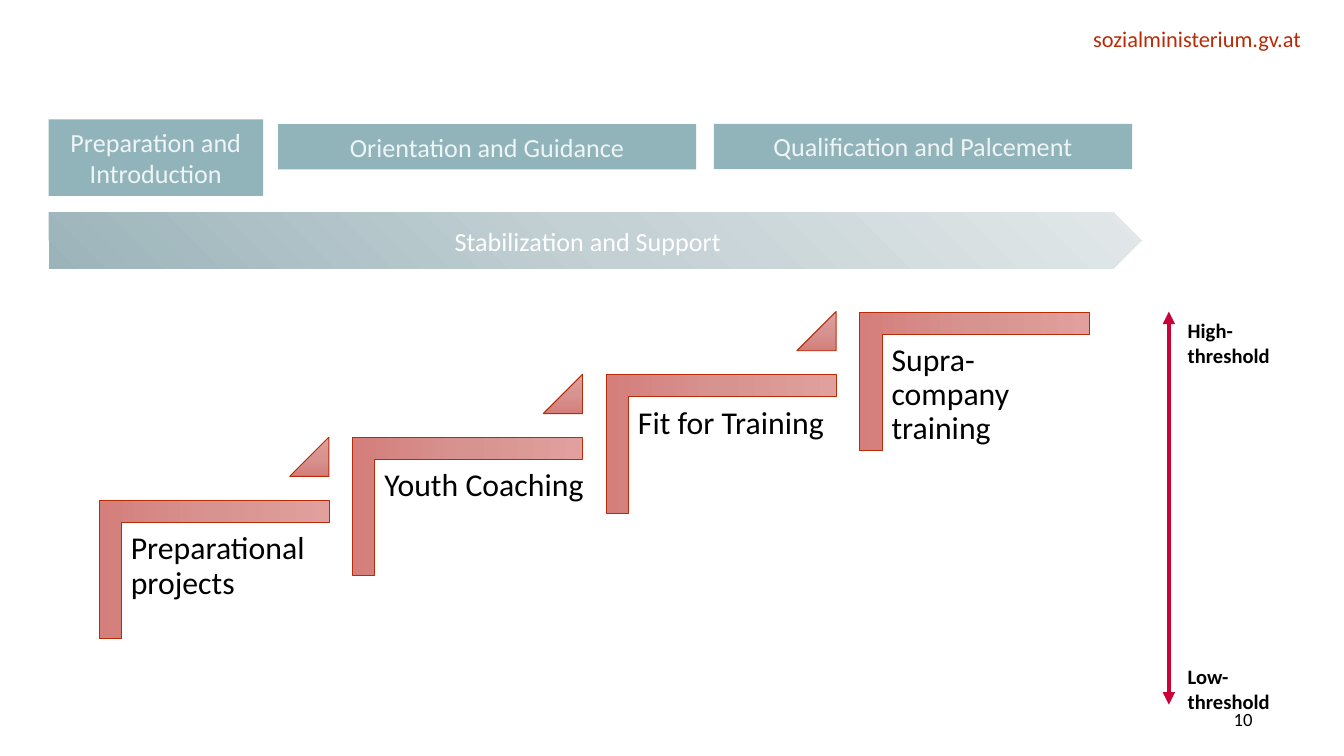
from copy import deepcopy
from dataclasses import dataclass

from lxml.etree import SubElement
from pptx import Presentation
from pptx.dml.color import RGBColor as RGB
from pptx.enum.shapes import MSO_CONNECTOR as CONNECTOR, MSO_SHAPE as SHAPE
from pptx.enum.text import MSO_ANCHOR as ANCHOR, PP_ALIGN as ALIGN
from pptx.oxml.ns import qn
from pptx.util import Pt


@dataclass(frozen=True)
class Theme:
    font: str = "Calibri"
    black: str = "000000"
    white: str = "FFFFFF"
    red: str = "B92B06"
    crimson: str = "CA0237"
    teal: str = "236B76"
    pale: str = "EFF4F7"
    step_gradient: tuple = ("E1A09D", "D79390", "D47F7C")
    support_gradient: tuple = ("9BB4BA", "C3D0D4", "E2E8E9")
    step_size: float = 17
    phase_size: float = 14
    site_size: float = 12
    threshold_size: float = 11
    number_size: float = 10


THEME = Theme()
PHASES = [
    ("Preparation and Introduction", 26, 64, 115, 41),
    ("Orientation and Guidance", 149, 66.5, 224, 24.3),
    ("Qualification and Palcement", 382.5, 66.3, 224, 24.3),
]
STEPS = [
    ("Preparational projects", 111),
    ("Youth Coaching", 120),
    ("Fit for Training", 111),
    ("Supra-company training", 111),
]
STEP_LEFT, STEP_TOP = 77.7, 243.5
STEP_RUN, STEP_RISE = 135.85, 33.65
ARROW_TOP, ARROW_BOTTOM = 167, 377.5


def write(shape, text, size, color, align=ALIGN.LEFT, anchor=ANCHOR.TOP,
          insets=(7.2, 3.6), bold=False, spacing=None):
    frame = shape.text_frame
    frame.word_wrap = True
    frame.vertical_anchor = anchor
    frame.margin_left = frame.margin_right = Pt(insets[0])
    frame.margin_top = frame.margin_bottom = Pt(insets[1])
    frame.text = text
    paragraph = frame.paragraphs[0]
    paragraph.alignment = align
    if spacing:
        paragraph.line_spacing = spacing
    font = paragraph.runs[0].font
    font.name, font.size, font.bold = THEME.font, Pt(size), bold
    font.color.rgb = RGB.from_string(color)


def add_label(slide, box, text, size, color, **style):
    label = slide.shapes.add_textbox(*map(Pt, box))
    write(label, text, size, color, **style)


def add_plain_shape(slide, kind, box):
    shape = slide.shapes.add_shape(kind, *map(Pt, box))
    shape.shadow.inherit = False
    shape.line.fill.background()
    return shape


def fill_gradient(shape, colors, angle):
    shape.fill.gradient()
    shape.fill.gradient_angle = angle
    stop_list = shape._element.spPr.find(".//" + qn("a:gsLst"))
    stop_list.insert(1, deepcopy(stop_list[0]))
    for stop, color, position in zip(shape.fill.gradient_stops, colors, (0, 0.5, 1)):
        stop.color.rgb = RGB.from_string(color)
        stop.position = position


def add_phase(slide, text, *box):
    phase = add_plain_shape(slide, SHAPE.RECTANGLE, box)
    phase.fill.solid()
    phase.fill.fore_color.rgb = RGB.from_string(THEME.teal)
    color = phase._element.spPr.find(qn("a:solidFill"))[0]
    SubElement(color, qn("a:alpha"), val="50000")
    write(phase, text, THEME.phase_size, THEME.pale, ALIGN.CENTER, ANCHOR.MIDDLE)


def add_support_arrow(slide):
    support = add_plain_shape(slide, SHAPE.PENTAGON, (26, 113.7, 585.5, 30.4))
    fill_gradient(support, THEME.support_gradient, 45)
    write(support, "Stabilization and Support", THEME.phase_size, THEME.white,
          ALIGN.CENTER, ANCHOR.MIDDLE)


def add_step_shape(slide, kind, box, adjustments):
    shape = add_plain_shape(slide, kind, box)
    for index, value in enumerate(adjustments):
        shape.adjustments[index] = value
    fill_gradient(shape, THEME.step_gradient, 270)
    shape.line.color.rgb = RGB.from_string(THEME.red)
    shape.line.width = Pt(0.5)
    return shape


def add_step(slide, index, text, text_width):
    left = STEP_LEFT + index * STEP_RUN
    top = STEP_TOP - index * STEP_RISE
    corner = add_step_shape(slide, SHAPE.CORNER, (left, top, 74, 123.2), (0.16, 0.16))
    corner.rotation = 90
    add_label(slide, (left - 12.6, top + 36.7, text_width, 97.2), text,
              THEME.step_size, THEME.black, insets=(5, 5), spacing=0.9)
    if index < len(STEPS) - 1:
        add_step_shape(slide, SHAPE.ISOSCELES_TRIANGLE,
                       (left + 77.5, top - 9.3, 21, 21), (1,))


def add_threshold_arrow(slide):
    x = Pt(626.2)
    arrow = slide.shapes.add_connector(
        CONNECTOR.STRAIGHT, x, Pt(ARROW_TOP), x, Pt(ARROW_BOTTOM))
    arrow.line.color.rgb = RGB.from_string(THEME.crimson)
    arrow.line.width = Pt(2.25)
    for end in ("a:headEnd", "a:tailEnd"):
        SubElement(arrow.line._get_or_add_ln(), qn(end), type="triangle")
    SubElement(arrow._element.spPr, qn("a:effectLst"))
    for text, top in (("High-threshold", ARROW_TOP), ("Low-threshold", 352.3)):
        add_label(slide, (629.2, top, 71.3, 34), text,
                  THEME.threshold_size, THEME.black, bold=True)


def main():
    presentation = Presentation()
    presentation.slide_width, presentation.slide_height = Pt(720), Pt(405)
    slide = presentation.slides.add_slide(presentation.slide_layouts[6])
    add_label(slide, (523.5, 13.7, 173.5, 14.6), "sozialministerium.gv.at",
              THEME.site_size, THEME.red, align=ALIGN.RIGHT, insets=(0, 0))
    for index, (text, width) in enumerate(STEPS):
        add_step(slide, index, text, width)
    add_label(slide, (595.4, 377.3, 75.6, 15.8), "10", THEME.number_size,
              THEME.black, align=ALIGN.RIGHT, anchor=ANCHOR.MIDDLE, insets=(0, 0))
    for phase in PHASES:
        add_phase(slide, *phase)
    add_support_arrow(slide)
    add_threshold_arrow(slide)
    presentation.save("out.pptx")


if __name__ == "__main__":
    main()
